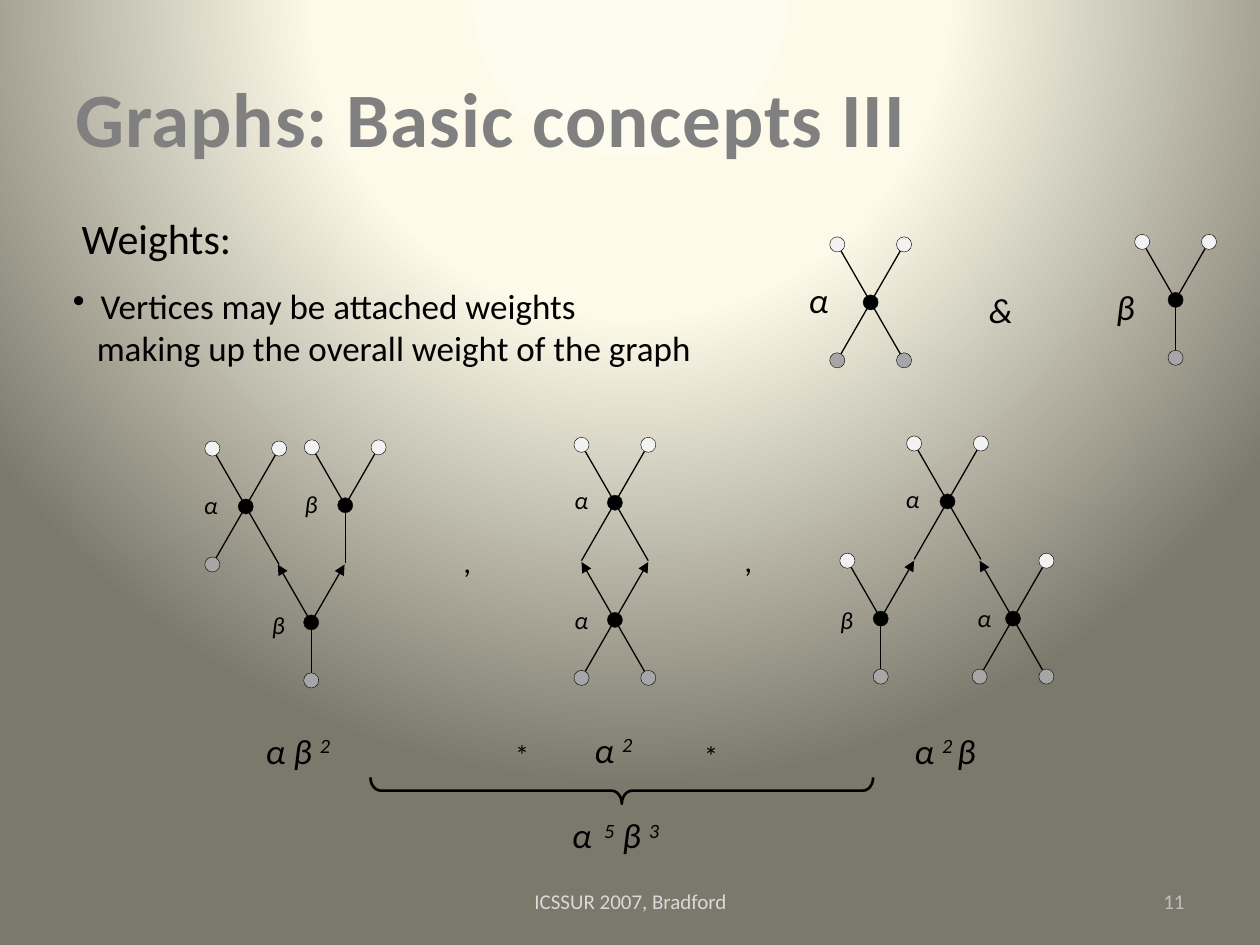
from lxml import etree
from pptx import Presentation
from pptx.dml.color import RGBColor
from pptx.enum.shapes import MSO_CONNECTOR as Connector, MSO_SHAPE as Shape
from pptx.enum.text import MSO_ANCHOR as Anchor, PP_ALIGN as Align
from pptx.oxml import parse_xml
from pptx.oxml.ns import nsdecls, qn
from pptx.util import Inches, Pt

COLORS = {
    "ink": "000000", "rim": "0D0D0D", "white": "F2F2F2", "grey": "A6A6A6",
    "title": "FCFCFD", "title_rim": "808080",
    "footer": "D9D9D9", "number": "BFBFBF",
}
BACKGROUND_STOPS = [(0, "FEFCEE"), (40, "FDFAEA"), (100, "7B796B")]
FONT = "Calibri"
DOT = 0.12
SPREAD = 0.53 / 2
RISE = 0.46


def rgb(name):
    return RGBColor.from_string(COLORS[name])


class GraphSlide:
    """Holds the current slide and the style of its graphs and text."""

    def __init__(self, deck):
        self.slide = deck.slides.add_slide(deck.slide_layouts[6])
        self.shapes = self.slide.shapes

    def background(self):
        stops = "".join(
            f'<a:gs pos="{place * 1000}"><a:srgbClr val="{color}"/></a:gs>'
            for place, color in BACKGROUND_STOPS)
        self.slide.element.cSld.insert(0, parse_xml(
            f'<p:bg {nsdecls("p", "a")}><p:bgPr><a:gradFill rotWithShape="1">'
            f'<a:gsLst>{stops}</a:gsLst><a:path path="circle">'
            '<a:fillToRect l="50000" t="-80000" r="50000" b="180000"/>'
            '</a:path></a:gradFill><a:effectLst/></p:bgPr></p:bg>'))

    def text(self, left, top, width, height, lines, size, color="ink",
             italic=False, align=Align.LEFT, anchor=Anchor.MIDDLE, wrap=True):
        box = self.shapes.add_textbox(
            Inches(left), Inches(top), Inches(width), Inches(height))
        frame = box.text_frame
        frame.word_wrap = wrap
        frame.vertical_anchor = anchor
        frame.text = lines
        for para in frame.paragraphs:
            para.alignment = align
            for span in para.runs:
                self.style(span, size, color, italic)
        return frame

    def style(self, span, size, color="ink", italic=False):
        font = span.font
        font.name, font.size, font.italic = FONT, Pt(size), italic
        font.color.rgb = rgb(color)

    def title(self, words):
        frame = self.text(0.5, 0.3, 9, 1.25, words, 44, "title")
        span = frame.paragraphs[0].runs[0]
        span.font.bold = True
        props = span.font._element
        props.set("spc", "50")
        alpha = etree.SubElement(next(props.iter(qn("a:srgbClr"))), qn("a:alpha"))
        alpha.set("val", "95000")
        props.insert(0, parse_xml(
            f'<a:ln {nsdecls("a")} w="{Pt(1.06)}"><a:solidFill>'
            f'<a:srgbClr val="{COLORS["title_rim"]}"/></a:solidFill></a:ln>'))

    def indent(self, para, margin, bullet=None):
        props = para._p.get_or_add_pPr()
        props.set("marL", str(Inches(margin)))
        if bullet:
            props.set("indent", str(-Inches(margin)))
            etree.SubElement(props, qn("a:buChar")).set("char", bullet)

    def weight(self, left, top, width, letter, size=14):
        height = 0.34 if size == 14 else 0.44
        return self.text(left, top, width, height, letter, size, italic=True,
                         anchor=Anchor.TOP, wrap=False)

    def product(self, left, top, width, pieces):
        """Write a weight product; every second piece is an exponent."""
        para = self.weight(left, top, width, "", 20).paragraphs[0]
        for index, piece in enumerate(pieces):
            span = para.add_run()
            span.text = piece
            self.style(span, 20, italic=True)
            if index % 2:
                span.font._element.set("baseline", "30000")

    def edge(self, start, end, arrow=False):
        line = self.shapes.add_connector(
            Connector.STRAIGHT, *(Inches(value) for value in (*start, *end)))
        line.line.color.rgb = rgb("ink")
        line.line.width = Pt(0.75)
        if arrow:
            tail = etree.SubElement(line.line._get_or_add_ln(), qn("a:tailEnd"))
            tail.set("type", "triangle")
        etree.SubElement(line._element.spPr, qn("a:effectLst"))

    def dot(self, x, y, color):
        dot = self.shapes.add_shape(
            Shape.OVAL, Inches(x - DOT / 2), Inches(y - DOT / 2),
            Inches(DOT), Inches(DOT))
        dot.shadow.inherit = False
        dot.fill.solid()
        dot.fill.fore_color.rgb = rgb(color)
        dot.line.color.rgb = rgb("rim")
        dot.line.width = Pt(0.25)

    def vertex(self, x, y, upper, lower):
        """Draw a vertex; each end is a dot colour, "arrow" or "open"."""
        ends = []
        for kinds, rise in ((upper, -RISE), (lower, RISE)):
            shifts = (-SPREAD, SPREAD) if len(kinds) == 2 else (0,)
            ends += [((x + shift, y + rise), kind)
                     for shift, kind in zip(shifts, kinds)]
        for point, kind in ends:
            self.edge((x, y), point, kind == "arrow")
        for point, kind in ends:
            if kind in COLORS:
                self.dot(*point, kind)
        self.dot(x, y, "ink")

    def brace(self, left, top, width, height):
        brace = self.shapes.add_shape(
            Shape.RIGHT_BRACE, Inches(left), Inches(top),
            Inches(width), Inches(height))
        brace.rotation = 90
        brace.adjustments[0] = 0.39
        brace.shadow.inherit = False
        brace.fill.background()
        brace.line.color.rgb = rgb("ink")
        brace.line.width = Pt(1.5)


def main():
    deck = Presentation()
    deck.slide_width, deck.slide_height = Inches(10), Inches(7.5)
    page = GraphSlide(deck)
    page.background()
    page.title("Graphs: Basic concepts III")
    page.text(3.42, 6.95, 3.17, 0.4, "ICSSUR 2007, Bradford", 12, "footer",
              align=Align.CENTER)
    page.text(7.17, 6.95, 2.33, 0.4, "11", 12, "number", align=Align.RIGHT)
    page.text(0.55, 1.55, 1.95, 0.68, "Weights:", 24)
    body = page.text(
        0.48, 2.07, 5.27, 1.04,
        "Vertices may be attached weights\nmaking up the overall weight of the graph", 20)
    page.indent(body.paragraphs[0], 0.22, "•")
    page.indent(body.paragraphs[1], 0.19)

    whites, greys = ("white", "white"), ("grey", "grey")
    arrows, opens, stem = ("arrow", "arrow"), ("open", "open"), ("grey",)
    for vertex in [
        (6.91, 2.4, whites, greys),
        (9.33, 2.38, whites, stem),
        (1.95, 4.02, whites, ("grey", "open")),
        (2.74, 4.01, whites, ("open",)),
        (2.47, 4.94, arrows, stem),
        (4.88, 3.99, whites, opens),
        (4.88, 4.92, arrows, greys),
        (7.52, 3.98, whites, opens),
        (6.99, 4.91, ("white", "arrow"), stem),
        (8.04, 4.91, ("arrow", "white"), greys),
    ]:
        page.vertex(*vertex)

    for left, top in [(1.52, 3.84), (4.46, 3.8), (4.46, 4.75), (7.66, 4.74), (7.09, 3.79)]:
        page.weight(left, top, 0.33, "α")
    for left, top in [(2.06, 4.79), (2.32, 3.83), (6.57, 4.75)]:
        page.weight(left, top, 0.31, "β")
    page.weight(6.32, 2.16, 0.38, "α", 20)
    page.weight(8.76, 2.22, 0.36, "β", 20)
    page.text(7.75, 2.1, 0.53, 0.72, "&", 20, italic=True)

    for left, top, sign, size in [(3.58, 4.2, ",", 18), (5.81, 4.19, ",", 18),
                                  (3.99, 5.73, "*", 16), (5.49, 5.74, "*", 16)]:
        page.text(left, top, 0.32, 0.51, sign, size)
    page.product(2.01, 5.74, 0.75, ["α β ", "2"])
    page.product(4.62, 5.73, 0.54, ["α ", "2"])
    page.product(7.16, 5.74, 0.8, ["α ", "2 ", "β"])
    page.brace(4.83, 4.28, 0.21, 3.99)
    page.product(4.44, 6.41, 1, ["α ", " 5", " β ", "3"])
    deck.save("out.pptx")


if __name__ == "__main__":
    main()
